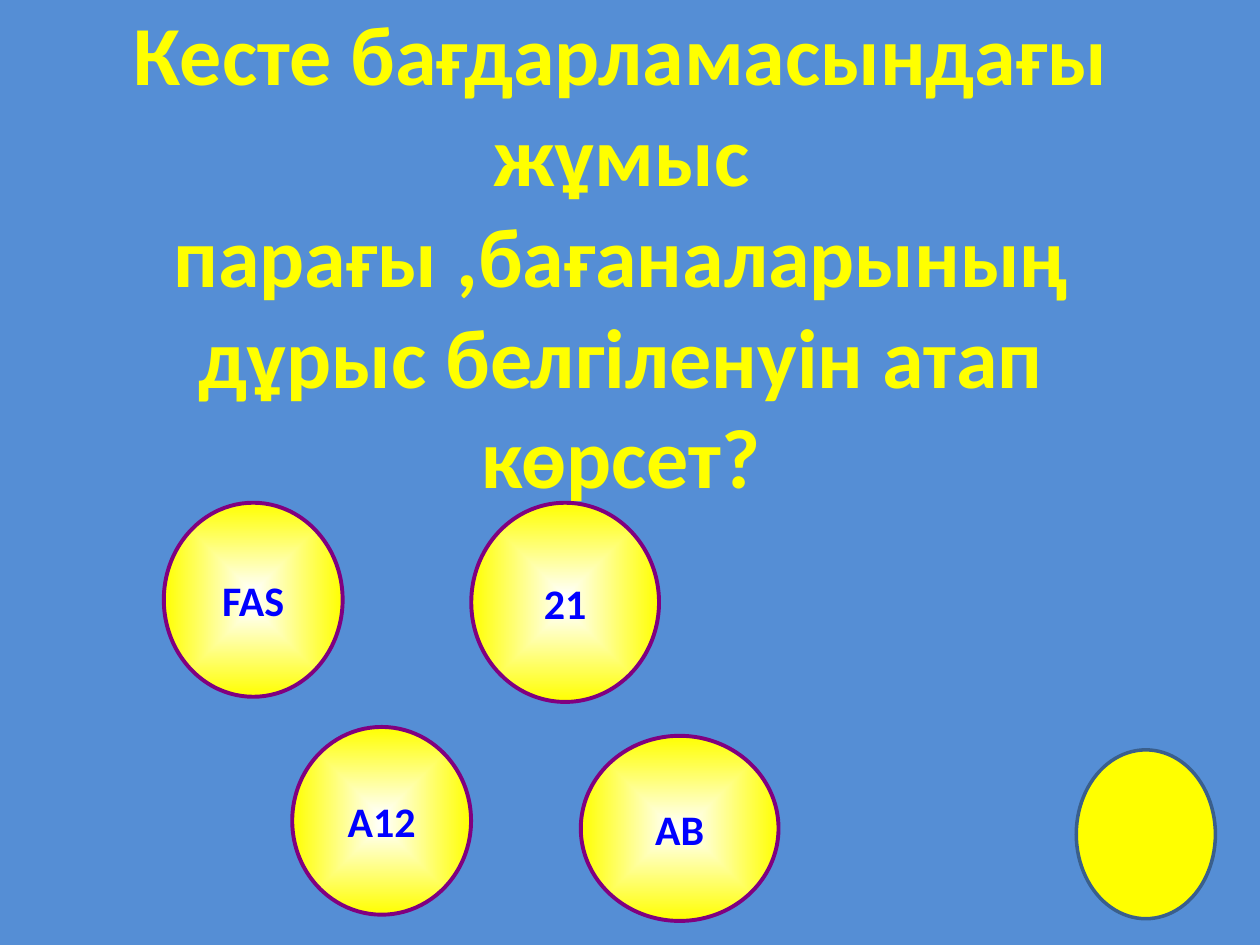
from lxml import etree
from pptx import Presentation
from pptx.dml.color import RGBColor
from pptx.enum.shapes import MSO_SHAPE
from pptx.enum.text import MSO_ANCHOR, MSO_AUTO_SIZE, PP_ALIGN
from pptx.oxml.ns import qn
from pptx.util import Pt

OVAL = MSO_SHAPE.OVAL
MIDDLE = MSO_ANCHOR.MIDDLE
NO_FIT = MSO_AUTO_SIZE.NONE
CENTER = PP_ALIGN.CENTER
TITLE_ONLY = 5

COLORS = {
    "background": "558ED5",
    "yellow": "FFFF00",
    "white": "FFFFFF",
    "purple": "800080",
    "blue": "0000FF",
    "steel": "3A5F8C",
}


class SlideBuilder:
    font = "Calibri"

    def __init__(self, prs):
        self.slide = prs.slides.add_slide(prs.slide_layouts[TITLE_ONLY])
        fill = self.slide.background.fill
        fill.solid()
        fill.fore_color.rgb = self.color("background")

    def color(self, name):
        return RGBColor.from_string(COLORS[name])

    def set_text(self, sp, text, size, color, wrap):
        tf = sp.text_frame
        tf.text = text
        tf.word_wrap = wrap
        tf.auto_size = NO_FIT
        tf.vertical_anchor = MIDDLE
        p = tf.paragraphs[0]
        p.alignment = CENTER
        font = p.runs[0].font
        font.name, font.size, font.bold = self.font, Pt(size), True
        font.color.rgb = self.color(color)

    def title(self, text, left, top, width, height):
        sp = self.slide.shapes.title
        sp.left, sp.top, sp.width, sp.height = map(Pt, (left, top, width, height))
        self.set_text(sp, text, 48, "yellow", True)

    def oval(self, left, top, width, height, line, weight):
        sp = self.slide.shapes.add_shape(OVAL, *map(Pt, (left, top, width, height)))
        sp.shadow.inherit = False
        sp.fill.solid()
        sp.fill.fore_color.rgb = self.color("yellow")
        sp.line.color.rgb = self.color(line)
        sp.line.width = Pt(weight)
        return sp

    def answer(self, text, left, top, width, height):
        sp = self.oval(left, top, width, height, "purple", 2.25)
        self.glow(sp)
        self.set_text(sp, text, 24, "blue", False)

    def glow(self, sp):
        """Fill from white in the centre to yellow at the edge."""
        sp.fill.gradient()
        for stop, name in zip(sp.fill.gradient_stops, ("white", "yellow")):
            stop.color.rgb = self.color(name)
        grad = sp._element.spPr.find(qn("a:gradFill"))
        linear = grad.find(qn("a:lin"))
        shape_fill = etree.Element(qn("a:path"), {"path": "shape"})
        etree.SubElement(shape_fill, qn("a:fillToRect"),
                         {side: "50000" for side in "ltrb"})
        grad.replace(linear, shape_fill)


def main():
    prs = Presentation()
    prs.slide_width, prs.slide_height = Pt(720), Pt(540)
    builder = SlideBuilder(prs)

    # Question
    builder.title("Кесте бағдарламасындағы жұмыс парағы ,бағаналарының "
                  "дұрыс белгіленуін атап көрсет?", 31, 100, 648, 90)

    # Plain oval in the corner
    builder.oval(615, 428.5, 79.5, 96.5, "steel", 2)

    # Answer choices
    for answer in (
        ("21", 269.3, 287.3, 107.3, 113.8),
        ("A12", 167, 415.4, 102.2, 107.3),
        ("FAS", 93.6, 287.3, 102.2, 110.9),
        ("AB", 331.9, 420.5, 113, 105.8),
    ):
        builder.answer(*answer)

    prs.save("out.pptx")


if __name__ == "__main__":
    main()
